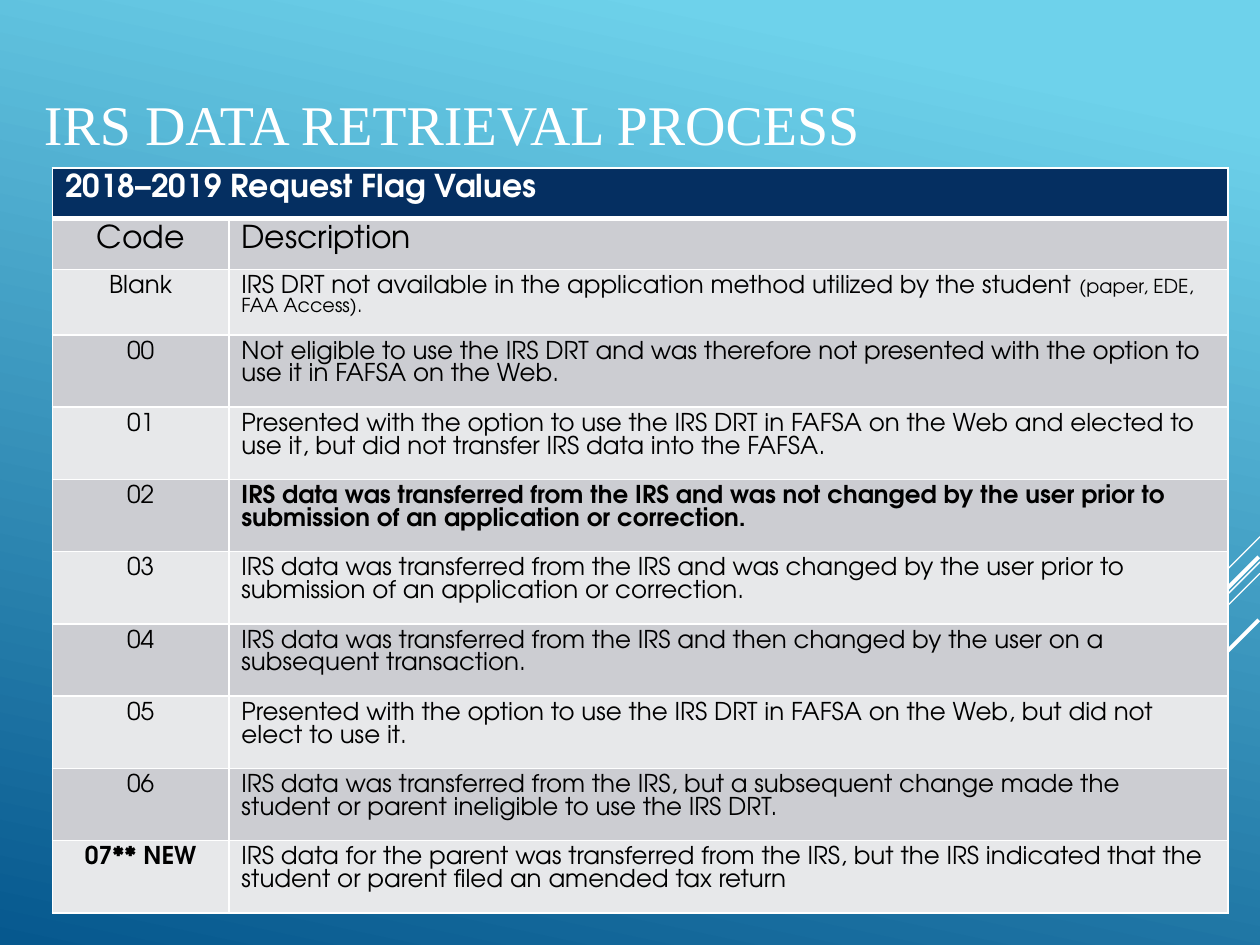
from lxml.etree import SubElement as Sub
from pptx import Presentation
from pptx.dml.color import RGBColor as Rgb
from pptx.enum.shapes import MSO_CONNECTOR as Conn
from pptx.enum.text import MSO_ANCHOR as Anchor, PP_ALIGN as Align
from pptx.oxml.ns import qn
from pptx.util import Pt

WHITE, BLACK, NAVY = "FFFFFF", "000000", "052F61"
BANDS = ["E7E8EA", "CCCDD2"]
SANS, SERIF = "TeX Gyre Adventor", "Times New Roman"

# Each row: code, description, format of the code, format of the description
BOLD = {"bold": True}
ROWS = [
    ("Blank", "IRS DRT not available in the application method utilized by the student ", {}, {}),
    ("00", "Not eligible to use the IRS DRT and was therefore not presented with "
           "the option to use it in FAFSA on the Web.", {}, {}),
    ("01", "Presented with the option to use the IRS DRT in FAFSA on the Web and "
           "elected to use it, but did not transfer IRS data into the FAFSA.", {}, {}),
    ("02", "IRS data was transferred from the IRS and was not changed by the user "
           "prior to submission of an application or correction.", {}, BOLD),
    ("03", "IRS data was transferred from the IRS and was changed by the user "
           "prior to submission of an application or correction.", {}, {}),
    ("04", "IRS data was transferred from the IRS and then changed by the user "
           "on a subsequent transaction.", {}, {}),
    ("05", "Presented with the option to use the IRS DRT in FAFSA on the Web, "
           "but did not elect to use it.", {}, {}),
    ("06", "IRS data was transferred from the IRS, but a subsequent change made "
           "the student or parent ineligible to use the IRS DRT.", {}, {}),
    ("07** NEW", "IRS data for the parent was transferred from the IRS, but the IRS "
                 "indicated that the student or parent filed an amended tax return", BOLD, {}),
]

# Diagonal lines: start x, start y, run to the lower left, weight
RAYS = [
    (720, 306.7, 60, 0.75),
    (720, 321.1, 194.8, 0.75),
    (720, 327.6, 123.8, 0.75),
    (719.3, 318.2, 113, 2.25),
    (719.3, 354.2, 82, 2.25),
]


def color(code):
    return Rgb.from_string(code)


def add_run(para, text, size, hue=BLACK, face=SANS, **more):
    run = para.add_run()
    run.text = text
    look = {"size": Pt(size), "name": face, "bold": False, **more}
    for key, val in look.items():
        setattr(run.font, key, val)
    run.font.color.rgb = color(hue)


def set_back(slide):
    fill = slide.background.fill
    fill.gradient()
    fill.gradient_angle = 258
    for stop, (pos, hue) in zip(fill.gradient_stops, [(0.1, "6ED2EB"), (1, "06588E")]):
        stop.position = pos
        stop.color.rgb = color(hue)


def add_ray(slide, x, y, run, weight):
    ray = slide.shapes.add_connector(Conn.STRAIGHT, Pt(x), Pt(y), Pt(x - run), Pt(y + run))
    ray.line.color.rgb = color(WHITE)
    ray.line.width = Pt(weight)
    Sub(ray._element.spPr, qn("a:effectLst"))


def add_title(slide, text):
    frame = slide.shapes.add_textbox(Pt(18), Pt(25.2), Pt(594), Pt(90)).text_frame
    frame.word_wrap = True
    frame.vertical_anchor = Anchor.MIDDLE
    add_run(frame.paragraphs[0], text, 32, WHITE, SERIF)


def style_cell(cell, hue, base=1):
    # Borders come before the fill in the cell properties
    props = cell._tc.get_or_add_tcPr()
    for side, width in [("L", 1), ("R", 1), ("T", 1), ("B", base)]:
        line = Sub(props, qn(f"a:ln{side}"), w=str(Pt(width)))
        Sub(Sub(line, qn("a:solidFill")), qn("a:srgbClr"), val=WHITE)
    cell.fill.solid()
    cell.fill.fore_color.rgb = color(hue)


def fill_cell(cell, text, size, align=Align.LEFT, **look):
    para = cell.text_frame.paragraphs[0]
    para.alignment = align
    add_run(para, text, size, **look)
    return para


def add_flags(slide):
    high = [29, 29, 37.4] + [41.3] * 8
    wide = [100.8, 571]
    table = slide.shapes.add_table(len(high), 2, Pt(30), Pt(96),
                                   Pt(sum(wide)), Pt(sum(high))).table
    for col, size in zip(table.columns, wide):
        col.width = Pt(size)
    for i, (row, size) in enumerate(zip(table.rows, high)):
        row.height = Pt(size)
        for cell in row.cells:
            style_cell(cell, BANDS[i % 2] if i else NAVY, 1 if i else 3)

    # Heading rows
    table.cell(0, 0).merge(table.cell(0, 1))
    fill_cell(table.cell(0, 0), "2018–2019 Request Flag Values", 18, hue=WHITE, bold=True)
    fill_cell(table.cell(1, 0), "Code", 18, Align.CENTER)
    fill_cell(table.cell(1, 1), "Description", 18)

    # Flag rows
    for i, (code, text, left, right) in enumerate(ROWS, 2):
        fill_cell(table.cell(i, 0), code, 14, Align.CENTER, **left)
        para = fill_cell(table.cell(i, 1), text, 14, **right)
        if code == "Blank":
            add_run(para, "(paper, EDE, FAA Access).", 11)


def main():
    deck = Presentation()
    deck.slide_width, deck.slide_height = Pt(720), Pt(540)
    slide = deck.slides.add_slide(deck.slide_layouts[6])
    set_back(slide)
    for ray in RAYS:
        add_ray(slide, *ray)
    add_title(slide, "IRS DATA RETRIEVAL PROCESS")
    add_flags(slide)
    deck.save("out.pptx")


if __name__ == "__main__":
    main()
